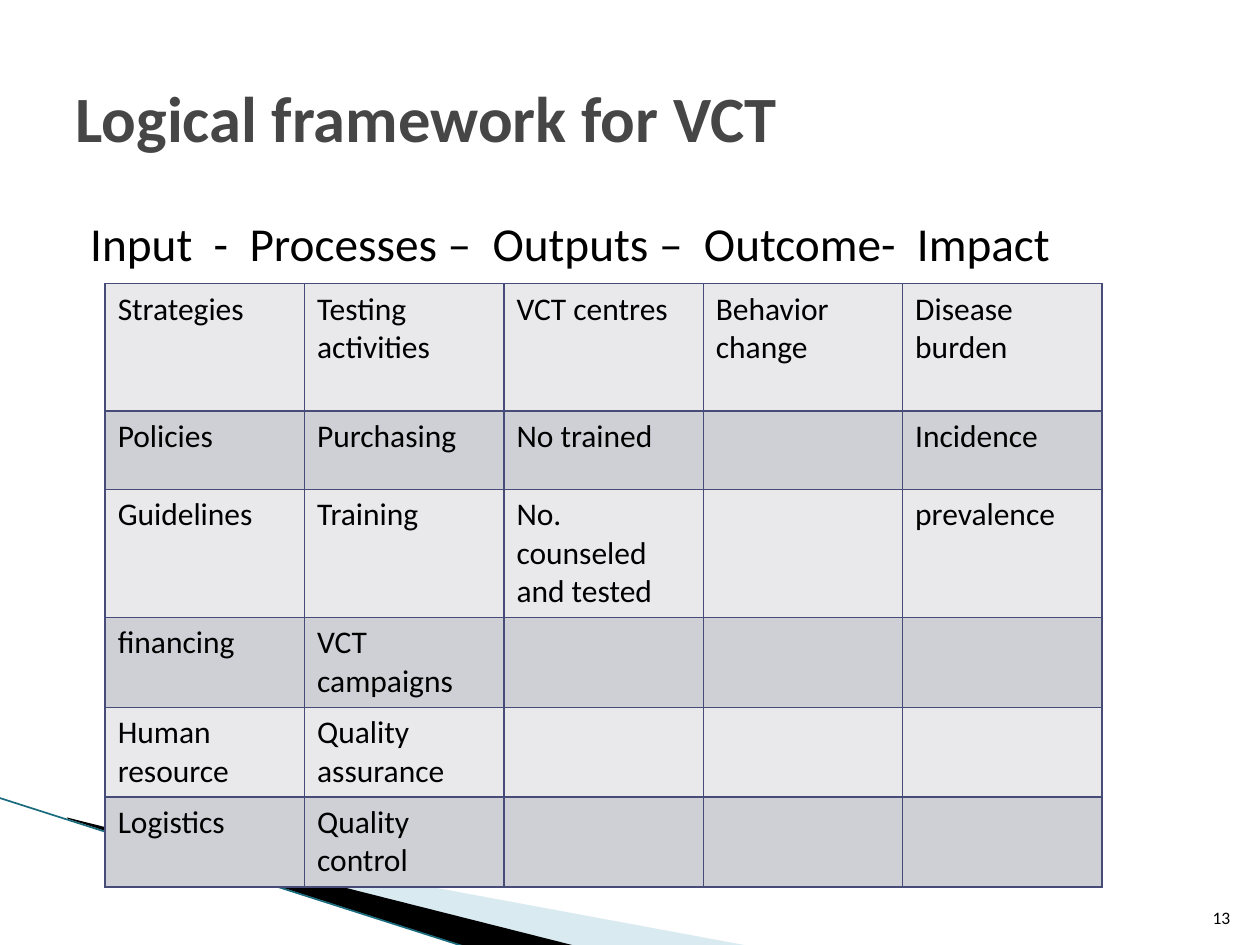
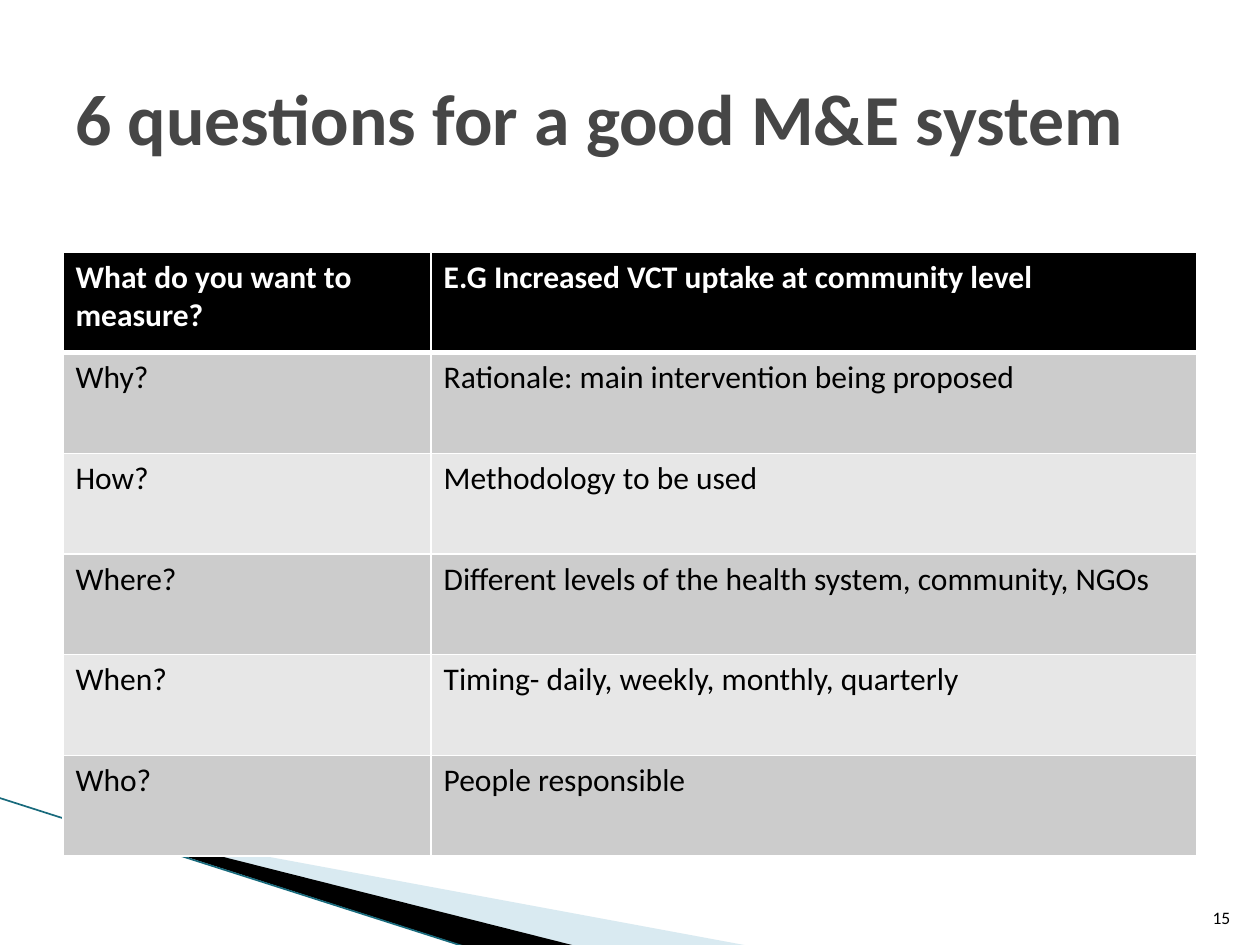
from lxml import etree
from pptx import Presentation
from pptx import util as u
from pptx.dml.color import RGBColor
from pptx.enum import shapes, text
from pptx.oxml import ns

FONT = "Calibri"
COLORS = {
    "title": "464646",
    "text": "000000",
    "white": "FFFFFF",
    "pale_band": "A0CBDC",
    "dark_band": "000000",
    "band_line": "186A7C",
    "grid": "474B78",
    "lavender_light": "E9E9EC",
    "lavender_dark": "CFD0D6",
    "gray_light": "E7E7E7",
    "gray_dark": "CCCCCC",
}
TITLE_BOX = (1.27, 0.76, 22.86, 3.18)
CHAIN_BOX = (1.57, 4.19, 22.5, 1.6)
NUMBER_BOX = (24.03, 17.81, 1.02, 1.02)
BAND_BOX = (0, 16.08, 15.11, 2.99)

FRAMEWORK_ROWS = [
    ["Strategies", "Testing activities", "VCT centres", "Behavior change", "Disease burden"],
    ["Policies", "Purchasing", "No trained", "", "Incidence"],
    ["Guidelines", "Training", "No. counseled and tested", "", "prevalence"],
    ["financing", "VCT campaigns", "", "", ""],
    ["Human resource", "Quality assurance", "", "", ""],
    ["Logistics", "Quality control", "", "", ""],
]
QUESTION_ROWS = [
    ["What do you want to measure?", "E.G Increased VCT uptake at community level"],
    ["Why?", "Rationale: main intervention being proposed"],
    ["How?", "Methodology to be used"],
    ["Where?", "Different levels of the health system, community, NGOs"],
    ["When?", "Timing- daily, weekly, monthly, quarterly"],
    ["Who?", "People responsible"],
]


def rgb(name):
    return RGBColor.from_string(COLORS[name])


def add_run(paragraph, words, size, color="text", bold=False):
    run = paragraph.add_run()
    run.text = words
    run.font.name = FONT
    run.font.size = u.Pt(size)
    run.font.bold = bold
    run.font.color.rgb = rgb(color)


def add_text(slide, box, words, size, color="text", bold=False,
             anchor=text.MSO_ANCHOR.TOP, align=text.PP_ALIGN.LEFT):
    frame = slide.shapes.add_textbox(*map(u.Cm, box)).text_frame
    frame.word_wrap = True
    frame.vertical_anchor = anchor
    paragraph = frame.paragraphs[0]
    paragraph.alignment = align
    add_run(paragraph, words, size, color, bold)


def add_band(slide, points, color, opacity=100):
    corners = [(u.Cm(x), u.Cm(y)) for x, y in points]
    builder = slide.shapes.build_freeform(*corners[0])
    builder.add_line_segments(corners[1:], close=True)
    shape = builder.convert_to_shape()
    shape.shadow.inherit = False
    shape.line.fill.background()
    shape.fill.solid()
    shape.fill.fore_color.rgb = rgb(color)
    if opacity < 100:
        fill_color = shape.fill._xPr.find(".//" + ns.qn("a:srgbClr"))
        etree.SubElement(fill_color, ns.qn("a:alpha"), val=str(opacity * 1000))


def add_corner_bands(slide, box):
    left, top, width, height = box
    right, bottom = left + width, top + height
    add_band(slide, [(left + 1.4, top + 0.45), (right, bottom),
                     (right - 3.53, bottom), (left + 1.4, top + 0.43)], "pale_band", 40)
    add_band(slide, [(left + 1.35, top + 0.4), (left + 11.61, bottom),
                     (left + 9.45, bottom + 0.03), (left + 1.37, top + 0.43)], "dark_band")
    line = slide.shapes.add_connector(
        shapes.MSO_CONNECTOR.STRAIGHT, u.Cm(left - 0.03), u.Cm(top),
        u.Cm(left + 9.42), u.Cm(bottom + 0.03))
    line.line.color.rgb = rgb("band_line")
    line.line.width = u.Pt(0.95)
    etree.SubElement(line._element.spPr, ns.qn("a:effectLst"))


def set_borders(cell, color, top=1, bottom=1):
    properties = cell._tc.get_or_add_tcPr()
    for side, width in (("L", 1), ("R", 1), ("T", top), ("B", bottom)):
        border = etree.SubElement(properties, ns.qn("a:ln" + side), w=str(u.Pt(width)))
        fill = etree.SubElement(border, ns.qn("a:solidFill"))
        etree.SubElement(fill, ns.qn("a:srgbClr"), val=COLORS[color])


def add_grid(slide, left, top, widths, heights, rows, fills, border, header=False):
    frame = slide.shapes.add_table(
        len(rows), len(widths), u.Cm(left), u.Cm(top),
        u.Cm(sum(widths)), u.Cm(sum(heights)))
    table = frame.table
    table.first_row = table.horz_banding = False
    for column, width in zip(table.columns, widths):
        column.width = u.Cm(width)
    for index, (row, height, words) in enumerate(zip(table.rows, heights, rows)):
        row.height = u.Cm(height)
        is_header = header and index == 0
        for cell, label in zip(row.cells, words):
            set_borders(cell, border, top=3 if header and index == 1 else 1,
                        bottom=3 if is_header else 1)
            cell.fill.solid()
            cell.fill.fore_color.rgb = rgb("text" if is_header else fills[index % 2])
            if label:
                add_run(cell.text_frame.paragraphs[0], label, 18,
                        "white" if is_header else "text", is_header)


def start_slide(presentation, title, title_size, number):
    slide = presentation.slides.add_slide(presentation.slide_layouts[6])
    add_corner_bands(slide, BAND_BOX)
    add_text(slide, TITLE_BOX, title, title_size, "title", True, text.MSO_ANCHOR.MIDDLE)
    add_text(slide, NUMBER_BOX, number, 10,
             anchor=text.MSO_ANCHOR.BOTTOM, align=text.PP_ALIGN.RIGHT)
    return slide


def add_framework_slide(presentation):
    slide = start_slide(presentation, "Logical framework for VCT", 36.9, "13")
    add_text(slide, CHAIN_BOX, "Input  -  Processes –  Outputs –  Outcome-  Impact", 27)
    add_grid(slide, 2.12, 5.72, [4.02] * 5, [2.57, 1.58, 2.58] + [1.81] * 3,
             FRAMEWORK_ROWS, ("lavender_light", "lavender_dark"), "grid")


def add_questions_slide(presentation):
    slide = start_slide(presentation, "6 questions for a good M&E system", 41, "15")
    add_grid(slide, 1.27, 5.08, [7.42, 15.44], [2.03] * 6,
             QUESTION_ROWS, ("gray_light", "gray_dark"), "white", header=True)


def main():
    presentation = Presentation()
    presentation.slide_width = u.Cm(25.4)
    presentation.slide_height = u.Cm(19.05)
    add_framework_slide(presentation)
    add_questions_slide(presentation)
    presentation.save("out.pptx")


if __name__ == "__main__":
    main()
